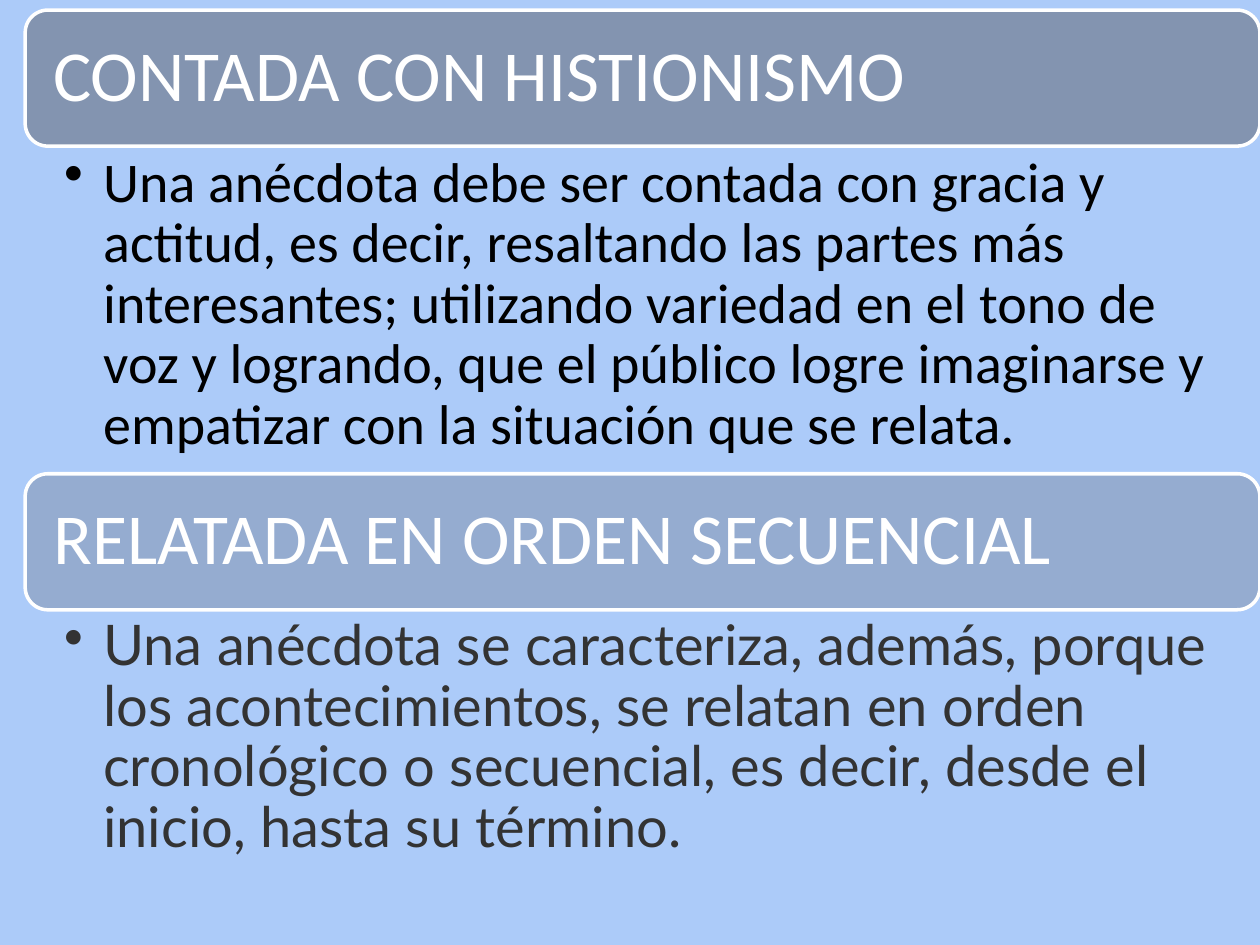
from lxml.etree import SubElement
from pptx import Presentation
from pptx.dml.color import RGBColor
from pptx.enum.shapes import MSO_SHAPE
from pptx.enum.text import MSO_ANCHOR
from pptx.oxml.ns import qn
from pptx.util import Inches, Pt

LEFT, WIDTH = 0.2, 9.8
HEADER_HEIGHT, BODY_HEIGHT = 1.08, 2.6
FIRST_TOP = 0.08


def paint(color_format, color):
    color_format.rgb = RGBColor.from_string(color)


def write_text(shape, text, *, size, font="Calibri", color="FFFFFF",
               margins=(0.17, 0.17, 0.17, 0.17),
               anchor=MSO_ANCHOR.TOP, bullet_indent=None):
    """Margins are left, top, right, bottom in inches; bullet_indent adds a hanging bullet."""
    frame = shape.text_frame
    frame.word_wrap = True
    frame.vertical_anchor = anchor
    (frame.margin_left, frame.margin_top,
     frame.margin_right, frame.margin_bottom) = map(Inches, margins)
    paragraph = frame.paragraphs[0]
    paragraph.line_spacing = 0.9
    properties = paragraph._p.get_or_add_pPr()
    properties.set("algn", "l")
    if bullet_indent:
        paragraph.level = 1
        properties.set("marL", str(Inches(bullet_indent)))
        properties.set("indent", str(-Inches(bullet_indent)))
        SubElement(properties, qn("a:buChar"), char="•")
    run = paragraph.add_run()
    run.text = text
    run.font.size = Pt(size)
    run.font.name = font
    paint(run.font.color, color)


sections = [
    ("CONTADA CON HISTIONISMO", 90,
     "Una anécdota debe ser contada con gracia y actitud, es decir, resaltando "
     "las partes más interesantes; utilizando variedad en el tono de voz y "
     "logrando, que el público logre imaginarse y empatizar con la situación "
     "que se relata.", "Calibri", "000000"),
    ("RELATADA EN ORDEN SECUENCIAL", 50,
     "Una anécdota se caracteriza, además, porque los acontecimientos, se "
     "relatan en orden cronológico o secuencial, es decir, desde el inicio, "
     "hasta su término.", "Lato", "333333"),
]

presentation = Presentation()
presentation.slide_width, presentation.slide_height = Inches(10), Inches(7.5)
slide = presentation.slides.add_slide(presentation.slide_layouts[6])
slide.background.fill.solid()
paint(slide.background.fill.fore_color, "ACCBF9")

for index, (title, opacity, description, font, color) in enumerate(sections):
    top = FIRST_TOP + index * (HEADER_HEIGHT + BODY_HEIGHT)

    header = slide.shapes.add_shape(
        MSO_SHAPE.ROUNDED_RECTANGLE,
        Inches(LEFT), Inches(top), Inches(WIDTH), Inches(HEADER_HEIGHT))
    header.shadow.inherit = False
    header.fill.solid()
    paint(header.fill.fore_color, "7F8FA9")
    fill_color = header._element.spPr.find(qn("a:solidFill"))[0]
    SubElement(fill_color, qn("a:alpha"), val=str(opacity * 1000))
    paint(header.line.color, "FFFFFF")
    header.line.width = Pt(2)
    write_text(header, title, size=41, anchor=MSO_ANCHOR.MIDDLE)

    body = slide.shapes.add_textbox(
        Inches(LEFT), Inches(top + HEADER_HEIGHT), Inches(WIDTH), Inches(BODY_HEIGHT))
    write_text(body, description, size=32, font=font, color=color,
               margins=(0.31, 0.06, 0.32, 0.06), bullet_indent=0.31)

presentation.save("out.pptx")
